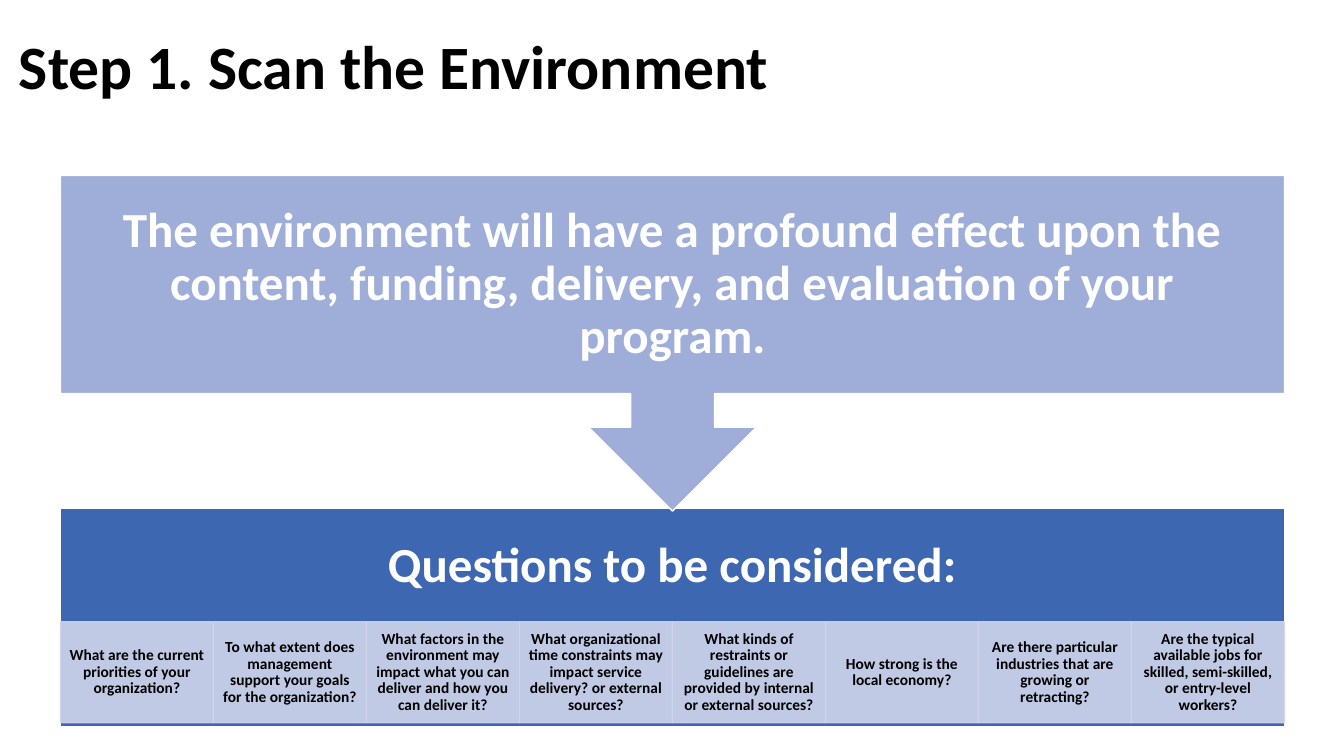
"""Build the slide "Step 1. Scan the Environment"."""
from lxml.etree import SubElement
from pptx import Presentation
from pptx.dml.color import RGBColor
from pptx.enum.shapes import MSO_SHAPE as Shape
from pptx.enum.text import MSO_ANCHOR as Anchor, PP_ALIGN as Align
from pptx.oxml.ns import qn
from pptx.util import Inches, Pt

BLACK = RGBColor(0x00, 0x00, 0x00)
WHITE = RGBColor(0xFF, 0xFF, 0xFF)
BLUE = RGBColor(0x3E, 0x67, 0xB2)
LIGHT_BLUE = RGBColor(0x9F, 0xAE, 0xD8)
PALE_BLUE = RGBColor(0xCF, 0xD5, 0xEA)

LEFT, WIDTH = 0.6, 12.14
QUESTIONS = [
    "What are the current priorities of your organization?",
    "To what extent does management support your goals for the organization?",
    "What factors in the environment may impact what you can deliver and how you can deliver it?",
    "What organizational time constraints may impact service delivery? or external sources?",
    "What kinds of restraints or guidelines are provided by internal or external sources?",
    "How strong is the local economy?",
    "Are there particular industries that are growing or retracting?",
    "Are the typical available jobs for skilled, semi-skilled, or entry-level workers?",
]


def add_panel(kind, left, top, width, height, fill, line):
    panel = slide.shapes.add_shape(
        kind, Inches(left), Inches(top), Inches(width), Inches(height))
    panel.shadow.inherit = False
    panel.fill.solid()
    panel.fill.fore_color.rgb = fill
    panel.line.color.rgb = line
    panel.line.width = Pt(1)
    return panel


def write_text(box, text, size, color, align, inset_x, inset_y):
    frame = box.text_frame
    frame.word_wrap = True
    frame.vertical_anchor = Anchor.MIDDLE
    frame.margin_left = frame.margin_right = Inches(inset_x)
    frame.margin_top = frame.margin_bottom = Inches(inset_y)
    frame.text = text
    para = frame.paragraphs[0]
    para.alignment = align
    para.line_spacing = 0.9
    font = para.runs[0].font
    font.name = "Calibri"
    font.size = Pt(size)
    font.bold = True
    font.color.rgb = color


deck = Presentation()
deck.slide_width = Inches(13.33)
deck.slide_height = Inches(7.5)
slide = deck.slides.add_slide(deck.slide_layouts[6])

title = slide.shapes.add_textbox(Inches(0.09), Inches(-0.05), Inches(10.06), Inches(1.48))
write_text(title, "Step 1. Scan the Environment", 44, BLACK, Align.LEFT, 0.1, 0.05)

add_panel(Shape.RECTANGLE, LEFT, 5.04, WIDTH, 2.17, BLUE, WHITE)

cell_width = WIDTH / len(QUESTIONS)
for index, question in enumerate(QUESTIONS):
    cell = add_panel(Shape.RECTANGLE, LEFT + index * cell_width, 6.17,
                     cell_width, 1, PALE_BLUE, PALE_BLUE)
    for color in cell._element.spPr.iter(qn("a:srgbClr")):
        SubElement(color, qn("a:alpha"), val="90000")
    write_text(cell, question, 11, BLACK, Align.CENTER, 0.09, 0.02)

callout = add_panel(Shape.UP_ARROW_CALLOUT, LEFT, 1.74, WIDTH, 3.33, LIGHT_BLUE, WHITE)
callout.rotation = 180

HEADINGS = [
    (1.74, 2.17, "The environment will have a profound effect upon the "
                 "content, funding, delivery, and evaluation of your program."),
    (5.04, 1.17, "Questions to be considered:"),
]
for top, height, text in HEADINGS:
    heading = slide.shapes.add_textbox(Inches(LEFT), Inches(top), Inches(WIDTH), Inches(height))
    write_text(heading, text, 35, WHITE, Align.CENTER, 0.27, 0.27)

deck.save("out.pptx")
